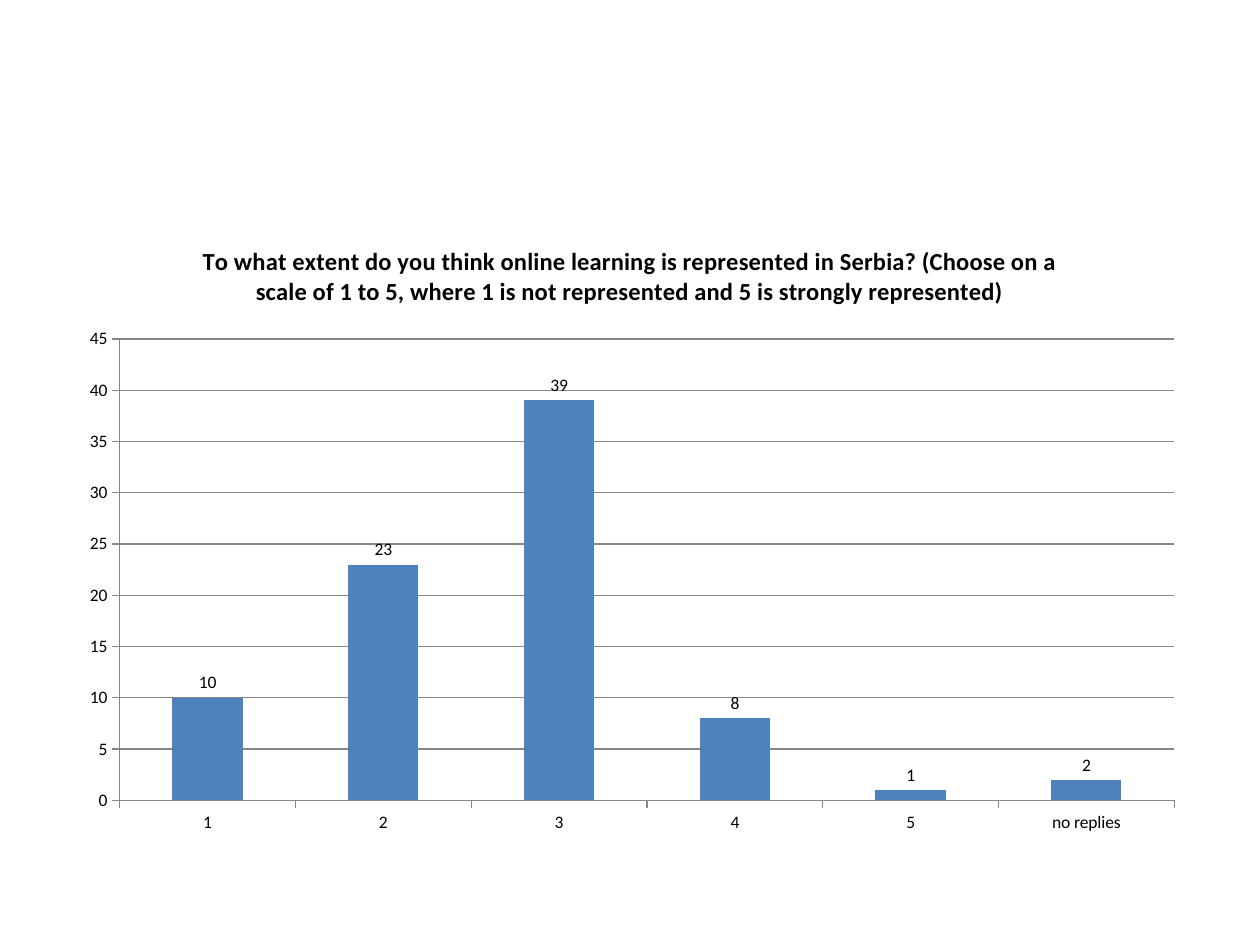
from typing import NamedTuple

from lxml import etree
from pptx import Presentation
from pptx import util as u
from pptx.chart.data import CategoryChartData
from pptx.dml.color import RGBColor
from pptx.enum import chart as ch
from pptx.oxml.ns import qn

BLACK = RGBColor(0x00, 0x00, 0x00)
BLUE = RGBColor(0x4F, 0x81, 0xBD)
GRAY = RGBColor(0x86, 0x86, 0x86)
FONT = "Calibri"
QUESTION = (
    "To what extent do you think online learning is represented in Serbia? "
    "(Choose on a scale of 1 to 5, where 1 is not represented "
    "and 5 is strongly represented)"
)


class Answer(NamedTuple):
    label: str
    count: int


ANSWERS = [
    Answer("1", 10),
    Answer("2", 23),
    Answer("3", 39),
    Answer("4", 8),
    Answer("5", 1),
    Answer("no replies", 2),
]


def style_font(font, size: float, bold: bool = False) -> None:
    font.name = FONT
    font.size = u.Pt(size)
    font.bold = bold
    font.color.rgb = BLACK


def style_line(line) -> None:
    line.color.rgb = GRAY
    line.width = u.Pt(0.75)


def style_axis(axis) -> None:
    axis.major_tick_mark = ch.XL_TICK_MARK.OUTSIDE
    axis.minor_tick_mark = ch.XL_TICK_MARK.NONE
    style_line(axis.format.line)
    style_font(axis.tick_labels.font, 10)


def place_plot(chart, left: float, top: float, width: float, height: float) -> None:
    plot_area = chart.plots[0]._element.getparent()
    layout = plot_area.find(qn("c:layout"))
    if layout is None:
        layout = etree.Element(qn("c:layout"))
        plot_area.insert(0, layout)
    manual = etree.SubElement(layout, qn("c:manualLayout"))
    settings = {
        "layoutTarget": "inner", "xMode": "edge", "yMode": "edge",
        "x": left, "y": top, "w": width, "h": height,
    }
    for name, value in settings.items():
        etree.SubElement(manual, qn(f"c:{name}")).set("val", str(value))


def add_survey_chart(page, answers: list[Answer]) -> None:
    data = CategoryChartData()
    data.categories = [answer.label for answer in answers]
    data.add_series("Series 1", [answer.count for answer in answers])
    chart = page.shapes.add_chart(
        ch.XL_CHART_TYPE.COLUMN_CLUSTERED,
        u.Inches(0.5), u.Inches(1.75), u.Inches(9), u.Inches(4.95), data,
    ).chart
    style_font(chart.font, 10)
    chart.has_legend = False

    chart.has_title = True
    title = chart.chart_title
    title.include_in_layout = False
    title.text_frame.text = QUESTION
    style_font(title.text_frame.paragraphs[0].runs[0].font, 14, bold=True)

    style_axis(chart.category_axis)
    counts = chart.value_axis
    style_axis(counts)
    counts.minimum_scale = 0
    counts.maximum_scale = 45
    counts.major_unit = 5
    counts.has_major_gridlines = True
    style_line(counts.major_gridlines.format.line)

    plot = chart.plots[0]
    plot.gap_width = 150
    plot.vary_by_categories = False
    fill = plot.series[0].format.fill
    fill.solid()
    fill.fore_color.rgb = BLUE
    plot.has_data_labels = True
    labels = plot.data_labels
    labels.show_value = True
    labels.position = ch.XL_LABEL_POSITION.OUTSIDE_END
    style_font(labels.font, 10)
    place_plot(chart, 0.05, 0.19, 0.93, 0.74)


def main() -> None:
    deck = Presentation()
    deck.slide_width = u.Inches(10)
    deck.slide_height = u.Inches(7.5)
    page = deck.slides.add_slide(deck.slide_layouts[6])
    add_survey_chart(page, ANSWERS)
    deck.save("out.pptx")


if __name__ == "__main__":
    main()
